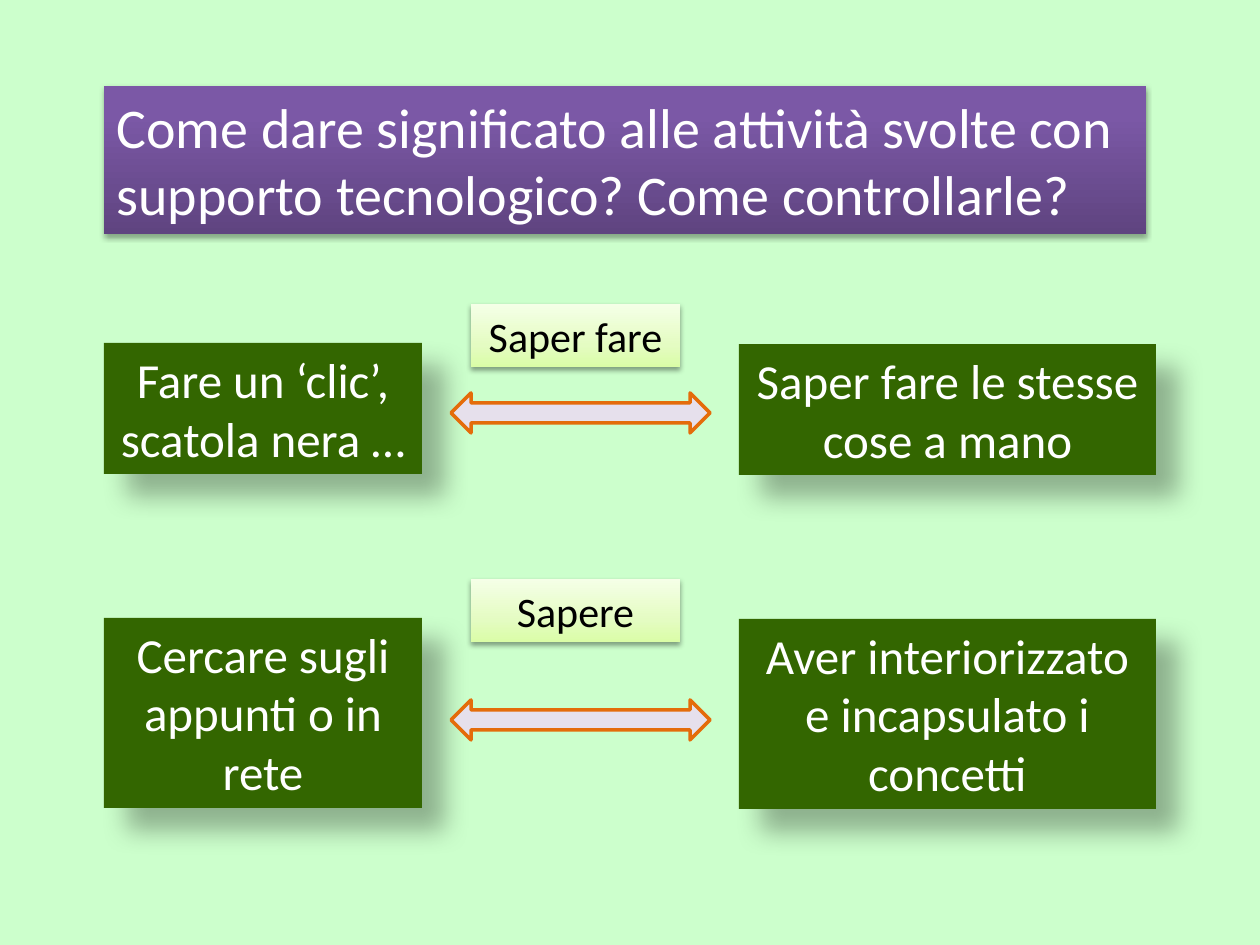
from dataclasses import dataclass
from typing import Optional

from lxml.etree import SubElement
from pptx import Presentation
from pptx.dml.color import RGBColor
from pptx.enum.shapes import MSO_SHAPE
from pptx.enum.text import MSO_ANCHOR, MSO_AUTO_SIZE, PP_ALIGN
from pptx.oxml.ns import qn
from pptx.shapes.autoshape import Shape
from pptx.slide import Slide
from pptx.util import Emu, Pt

PX = 914400 / 126


@dataclass(frozen=True)
class Shadow:
    opacity: int
    blur: float
    distance: float
    angle: int


@dataclass(frozen=True)
class BoxStyle:
    fills: tuple[tuple[int, str], ...]
    text_color: str
    size: int
    align: PP_ALIGN
    shadow: Shadow


@dataclass(frozen=True)
class Theme:
    font: str = "Calibri"
    background: str = "CCFFCC"
    arrow_fill: str = "E6E0EC"
    arrow_line: str = "E46C0A"
    arrow_width: int = 2
    title: BoxStyle = BoxStyle(
        ((0, "5F4480"), (80, "7B58A6"), (100, "7C57A8")),
        "FFFFFF", 32, PP_ALIGN.LEFT, Shadow(35, 3.1, 1.8, 90),
    )
    concept: BoxStyle = BoxStyle(
        ((0, "336600"),), "FFFFFF", 28, PP_ALIGN.CENTER, Shadow(30, 15, 18, 45)
    )
    label: BoxStyle = BoxStyle(
        ((0, "DAFDA7"), (35, "E4FCC2"), (100, "F5FFE7")),
        "000000", 24, PP_ALIGN.CENTER, Shadow(38, 3.1, 1.6, 90),
    )


@dataclass(frozen=True)
class Box:
    left: int
    top: int
    width: int
    height: int

    def emu(self) -> tuple[Emu, ...]:
        lengths = (self.left, self.top, self.width, self.height)
        return tuple(Emu(round(length * PX)) for length in lengths)


@dataclass(frozen=True)
class Comparison:
    top: int
    height: int
    arrow_top: int
    start: str
    label: str
    goal: str


THEME = Theme()
TITLE = "Come dare significato alle attività svolte con supporto tecnologico? Come controllarle?"
COMPARISONS = (
    Comparison(343, 131, 393, "Fare un ‘clic’, scatola nera …",
               "Saper fare", "Saper fare le stesse cose a mano"),
    Comparison(618, 190, 700, "Cercare sugli appunti o in rete",
               "Sapere", "Aver interiorizzato e incapsulato i concetti"),
)


def color(value: str) -> RGBColor:
    return RGBColor.from_string(value)


def fill_box(shape: Shape, fills: tuple[tuple[int, str], ...]) -> None:
    if len(fills) == 1:
        shape.fill.solid()
        shape.fill.fore_color.rgb = color(fills[0][1])
        return
    shape.fill.gradient()
    shape.fill.gradient_angle = 90
    stops = shape.element.spPr.find(qn("a:gradFill")).find(qn("a:gsLst"))
    for stop in list(stops):
        stops.remove(stop)
    for position, value in fills:
        stop = SubElement(stops, qn("a:gs"), pos=str(position * 1000))
        SubElement(stop, qn("a:srgbClr"), val=value)


def set_shadow(shape: Shape, shadow: Optional[Shadow]) -> None:
    shape.shadow.inherit = False
    if shadow is None:
        return
    effects = shape.element.spPr.find(qn("a:effectLst"))
    outer = SubElement(
        effects, qn("a:outerShdw"), blurRad=str(Pt(shadow.blur)),
        dist=str(Pt(shadow.distance)), dir=str(shadow.angle * 60000),
        algn="tl", rotWithShape="0",
    )
    black = SubElement(outer, qn("a:srgbClr"), val="000000")
    SubElement(black, qn("a:alpha"), val=str(shadow.opacity * 1000))


def format_box(shape: Shape, text: str, style: BoxStyle) -> None:
    fill_box(shape, style.fills)
    shape.line.fill.background()
    set_shadow(shape, style.shadow)
    frame = shape.text_frame
    frame.text = text
    frame.word_wrap = True
    frame.auto_size = MSO_AUTO_SIZE.SHAPE_TO_FIT_TEXT
    frame.vertical_anchor = MSO_ANCHOR.TOP
    paragraph = frame.paragraphs[0]
    paragraph.alignment = style.align
    for run in paragraph.runs:
        run.font.name = THEME.font
        run.font.size = Pt(style.size)
        run.font.color.rgb = color(style.text_color)


def add_title(slide: Slide, box: Box) -> None:
    title = slide.shapes.title
    title.left, title.top, title.width, title.height = box.emu()
    format_box(title, TITLE, THEME.title)


def add_box(slide: Slide, box: Box, text: str, style: BoxStyle) -> None:
    shape = slide.shapes.add_shape(MSO_SHAPE.RECTANGLE, *box.emu())
    format_box(shape, text, style)


def add_arrow(slide: Slide, box: Box) -> None:
    arrow = slide.shapes.add_shape(MSO_SHAPE.LEFT_RIGHT_ARROW, *box.emu())
    fill_box(arrow, ((0, THEME.arrow_fill),))
    arrow.line.color.rgb = color(THEME.arrow_line)
    arrow.line.width = Pt(THEME.arrow_width)
    set_shadow(arrow, None)


def add_comparison(slide: Slide, row: Comparison) -> None:
    add_box(slide, Box(104, row.top, 318, row.height), row.start, THEME.concept)
    add_box(slide, Box(739, row.top + 1, 417, row.height), row.goal, THEME.concept)
    add_arrow(slide, Box(451, row.arrow_top, 259, 40))
    add_box(slide, Box(471, row.top - 39, 209, 63), row.label, THEME.label)


def main() -> None:
    presentation = Presentation()
    presentation.slide_width = Emu(round(1260 * PX))
    presentation.slide_height = Emu(round(945 * PX))
    slide = presentation.slides.add_slide(presentation.slide_layouts[5])
    slide.background.fill.solid()
    slide.background.fill.fore_color.rgb = color(THEME.background)
    add_title(slide, Box(104, 86, 1042, 148))
    for row in COMPARISONS:
        add_comparison(slide, row)
    presentation.save("out.pptx")


if __name__ == "__main__":
    main()
